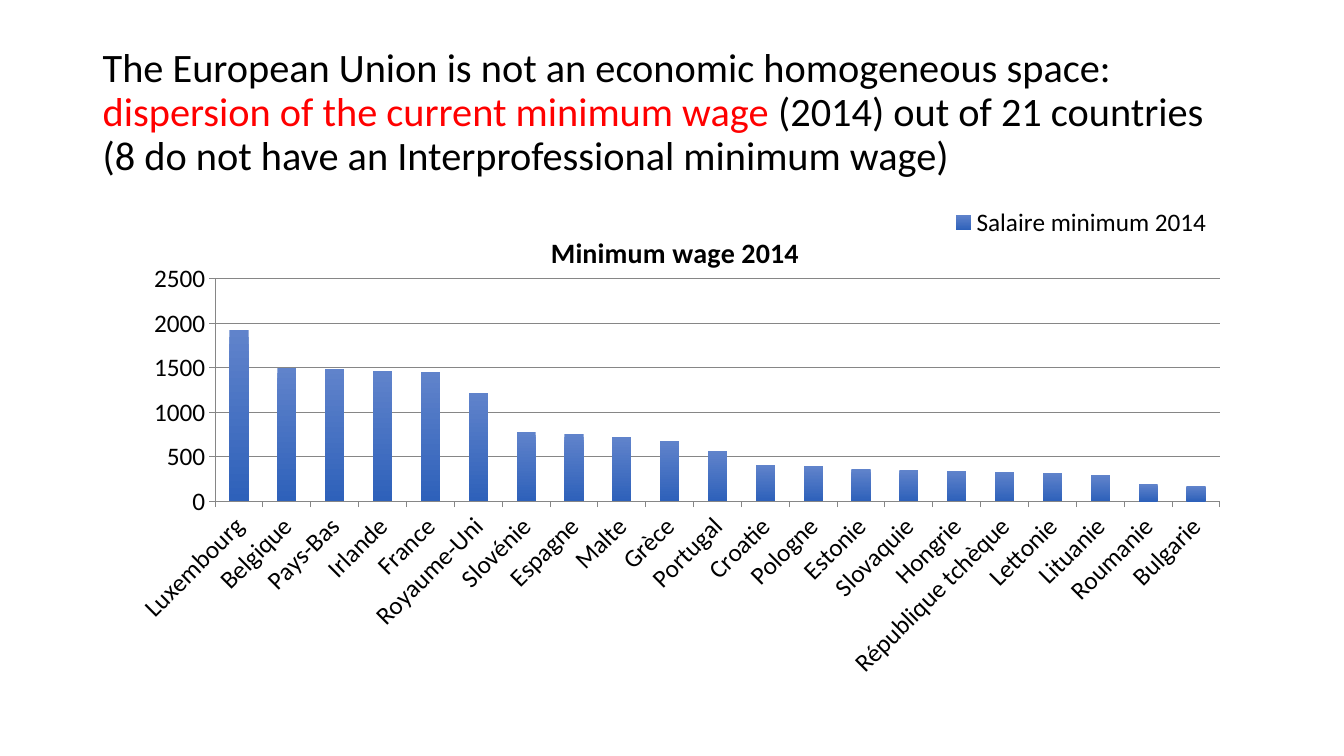
import dataclasses
import typing

import pptx
import pptx.chart.data
import pptx.dml.color
import pptx.enum.chart
import pptx.enum.text
import pptx.oxml
import pptx.oxml.ns
import pptx.util

BLACK = pptx.dml.color.RGBColor(0x00, 0x00, 0x00)
RED = pptx.dml.color.RGBColor(0xFF, 0x00, 0x00)
GREY = pptx.dml.color.RGBColor(0x86, 0x86, 0x86)
BAR_TOP = pptx.dml.color.RGBColor(0x60, 0x83, 0xCB)
BAR_BOTTOM = pptx.dml.color.RGBColor(0x2E, 0x61, 0xBA)
FONT_NAME = "Calibri"


@dataclasses.dataclass(frozen=True)
class TitleRun:
    text: str
    color: pptx.dml.color.RGBColor


@dataclasses.dataclass(frozen=True)
class Country:
    name: str
    wage: int


TITLE_RUNS = (
    TitleRun("The European Union is not an economic homogeneous space: ", BLACK),
    TitleRun("dispersion of the current minimum wage ", RED),
    TitleRun("(2014) out of 21 countries (8 do not have an Interprofessional minimum wage)", BLACK),
)

COUNTRIES = (
    Country("Luxembourg", 1920),
    Country("Belgique", 1500),
    Country("Pays-Bas", 1490),
    Country("Irlande", 1460),
    Country("France", 1450),
    Country("Royaume-Uni", 1220),
    Country("Slovénie", 780),
    Country("Espagne", 750),
    Country("Malte", 720),
    Country("Grèce", 680),
    Country("Portugal", 570),
    Country("Croatie", 410),
    Country("Pologne", 390),
    Country("Estonie", 360),
    Country("Slovaquie", 350),
    Country("Hongrie", 340),
    Country("République tchèque", 330),
    Country("Lettonie", 320),
    Country("Lituanie", 290),
    Country("Roumanie", 190),
    Country("Bulgarie", 170),
)


def set_attributes(target: typing.Any, values: dict[str, typing.Any]) -> None:
    for name, value in values.items():
        setattr(target, name, value)


def set_font(font: typing.Any, size: float, color: pptx.dml.color.RGBColor, bold: bool = False) -> None:
    set_attributes(font, {"name": FONT_NAME, "size": pptx.util.Pt(size), "bold": bold})
    font.color.rgb = color


def make_layout(places: dict[str, float], inner: bool = False) -> typing.Any:
    target = '<c:layoutTarget val="inner"/>' if inner else ""
    modes = "".join(f'<c:{name}Mode val="edge"/>' for name in ("x", "y"))
    values = "".join(f'<c:{name} val="{value}"/>' for name, value in places.items())
    return pptx.oxml.parse_xml(
        f'<c:layout {pptx.oxml.ns.nsdecls("c")}><c:manualLayout>'
        f"{target}{modes}{values}</c:manualLayout></c:layout>"
    )


def place_part(element: typing.Any, layout: typing.Any, before: str) -> None:
    for old_layout in element.xpath("./c:layout"):
        element.remove(old_layout)
    element.xpath(f"./c:{before}")[0].addprevious(layout)


def add_title(slide: typing.Any) -> None:
    title = slide.shapes.add_textbox(*map(pptx.util.Inches, (0.92, 0.4, 11.5, 1.45)))
    set_attributes(title.text_frame, {
        "word_wrap": True,
        "vertical_anchor": pptx.enum.text.MSO_ANCHOR.MIDDLE,
    })
    paragraph = title.text_frame.paragraphs[0]
    paragraph.line_spacing = 0.9
    for title_run in TITLE_RUNS:
        run = paragraph.add_run()
        run.text = title_run.text
        set_font(run.font, 28.8, title_run.color)


def style_axes(chart: typing.Any) -> None:
    for axis in (chart.category_axis, chart.value_axis):
        axis.major_tick_mark = pptx.enum.chart.XL_TICK_MARK.OUTSIDE
        axis.format.line.color.rgb = GREY
        set_font(axis.tick_labels.font, 18, BLACK)
    set_attributes(chart.value_axis, {
        "minimum_scale": 0,
        "maximum_scale": 2500,
        "major_unit": 500,
        "has_major_gridlines": True,
    })
    chart.value_axis.major_gridlines.format.line.color.rgb = GREY
    for body in chart.category_axis._element.xpath("./c:txPr/a:bodyPr"):
        body.set("rot", "-2700000")


def add_wage_chart(slide: typing.Any) -> None:
    chart_data = pptx.chart.data.CategoryChartData(number_format="General")
    chart_data.categories = [country.name for country in COUNTRIES]
    chart_data.add_series("Salaire minimum 2014", [country.wage for country in COUNTRIES])
    chart = slide.shapes.add_chart(
        pptx.enum.chart.XL_CHART_TYPE.COLUMN_CLUSTERED,
        *map(pptx.util.Inches, (0.92, 2, 11.67, 5.18)),
        chart_data,
    ).chart
    set_font(chart.font, 18, BLACK)
    style_axes(chart)

    chart.has_title = True
    chart.chart_title.text_frame.text = "Minimum wage 2014"
    set_font(chart.chart_title.text_frame.paragraphs[0].runs[0].font, 20, BLACK, bold=True)

    chart.has_legend = True
    set_attributes(chart.legend, {
        "position": pptx.enum.chart.XL_LEGEND_POSITION.RIGHT,
        "include_in_layout": False,
    })
    set_font(chart.legend.font, 18, BLACK)

    plot = chart.plots[0]
    set_attributes(plot, {"gap_width": 150, "vary_by_categories": False})
    fill = plot.series[0].format.fill
    fill.gradient()
    fill.gradient_angle = 270
    for stop, position, color in zip(fill.gradient_stops, (0, 1), (BAR_TOP, BAR_BOTTOM)):
        stop.position = position
        stop.color.rgb = color

    chart_element = chart._chartSpace.chart
    place_part(chart_element.plotArea, make_layout(
        {"x": 0.104, "y": 0.148, "w": 0.854, "h": 0.426}, inner=True), "barChart")
    place_part(chart.chart_title._element, make_layout({"x": 0.385, "y": 0.05}), "overlay")
    place_part(chart.legend._element, make_layout(
        {"x": 0.725, "y": 0.01, "w": 0.23, "h": 0.06}), "overlay")


def main() -> None:
    presentation = pptx.Presentation()
    set_attributes(presentation, {
        "slide_width": pptx.util.Inches(13.33),
        "slide_height": pptx.util.Inches(7.5),
    })
    slide = presentation.slides.add_slide(presentation.slide_layouts[6])
    add_title(slide)
    add_wage_chart(slide)
    presentation.save("out.pptx")


if __name__ == "__main__":
    main()
